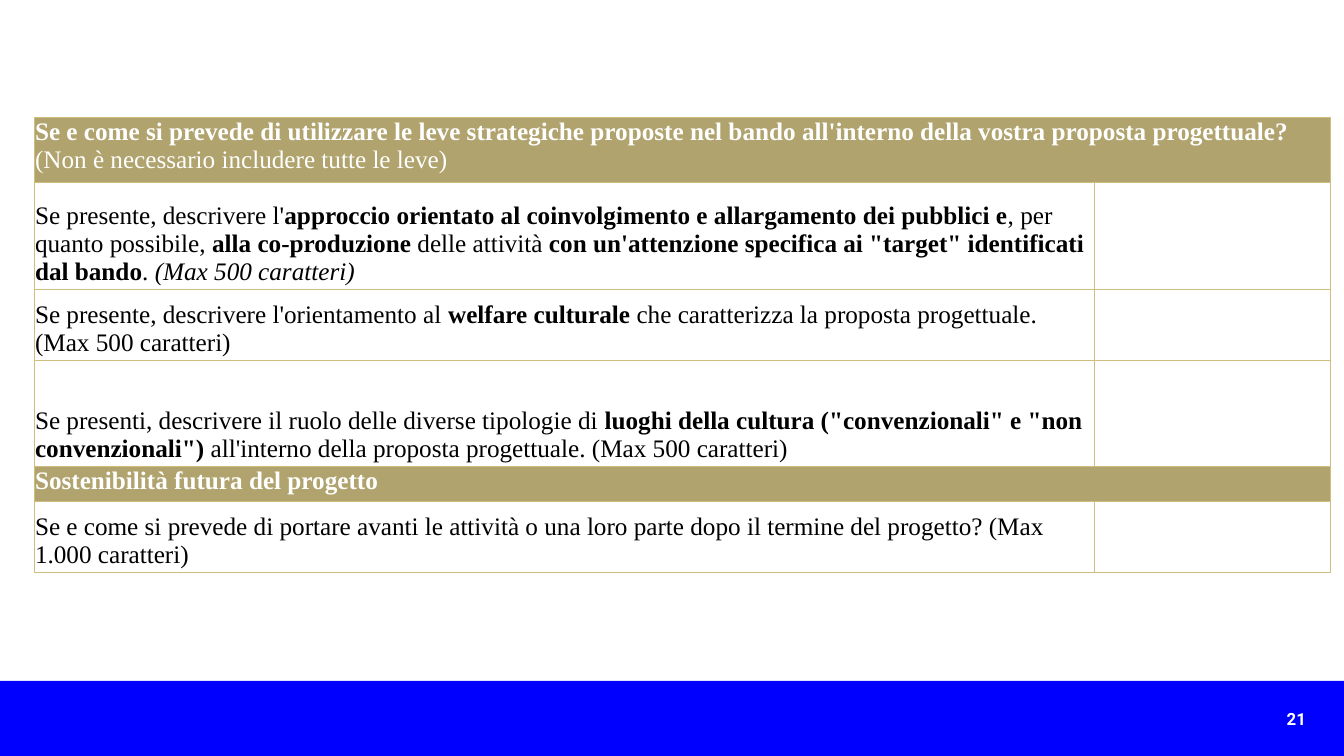
from lxml import etree
from pptx import Presentation
from pptx import util as u
from pptx.dml.color import RGBColor
from pptx.enum import shapes, text
from pptx.oxml import ns

EMU_PER_PX = 914400 / 100.8
WIDTH, HEIGHT = 1344, 756
GOLD, RULE, BLUE, WHITE, BLACK = "B0A36D", "CFBE7E", "0000FF", "FFFFFF", "000000"
PLAIN, BOLD, ITALIC = "plain", "bold", "italic"

# Each row: height, whether it is a section heading, runs of (wording, style)
QUESTIONS = [
    (65, True, [
        ("Se e come si prevede di utilizzare le leve strategiche proposte nel bando "
         "all'interno della vostra proposta progettuale? ", BOLD),
        ("(Non è necessario includere tutte le leve)", PLAIN)]),
    (107, False, [
        ("Se presente, descrivere l'", PLAIN),
        ("approccio orientato al coinvolgimento e allargamento dei pubblici e", BOLD),
        (", per quanto possibile,", PLAIN),
        (" alla co-produzione ", BOLD),
        ("delle attività ", PLAIN),
        ("con un'attenzione specifica ai \"target\" identificati dal bando", BOLD),
        (". ", PLAIN),
        ("(Max 500 caratteri)", ITALIC)]),
    (71, False, [
        ("Se presente, descrivere l'orientamento al ", PLAIN),
        ("welfare culturale", BOLD),
        (" che caratterizza la proposta progettuale. (Max 500 caratteri)", PLAIN)]),
    (106, False, [
        ("Se presenti, descrivere il ruolo delle diverse tipologie di", PLAIN),
        (" luoghi della cultura (\"convenzionali\" e \"non convenzionali\")", BOLD),
        (" all'interno della proposta progettuale. (Max 500 caratteri)", PLAIN)]),
    (34, True, [("Sostenibilità futura del progetto", BOLD)]),
    (71, False, [
        ("Se e come si prevede di portare avanti le attività o una loro parte "
         "dopo il termine del progetto? (Max 1.000 caratteri)", PLAIN)]),
]


def px(length):
    return u.Emu(round(length * EMU_PER_PX))


def color(value):
    return RGBColor.from_string(value)


def add_run(paragraph, wording, style, face, size, ink):
    run = paragraph.add_run()
    run.text = wording
    font = run.font
    font.name, font.size = face, u.Pt(size)
    font.bold, font.italic = style == BOLD, style == ITALIC
    font.color.rgb = color(ink)


def set_insets(box, left, top, right, bottom):
    box.margin_left, box.margin_top = px(left), px(top)
    box.margin_right, box.margin_bottom = px(right), px(bottom)


def rule_cell(cell):
    """Draw a thin line on all four sides of the cell."""
    properties = cell._tc.get_or_add_tcPr()
    for position, side in enumerate(("lnL", "lnR", "lnT", "lnB")):
        line = etree.Element(ns.qn(f"a:{side}"), w=str(u.Pt(0.5)))
        fill = etree.SubElement(line, ns.qn("a:solidFill"))
        etree.SubElement(fill, ns.qn("a:srgbClr"), val=RULE)
        properties.insert(position, line)


def add_question_table(slide, left, top, question_width, answer_width):
    height = sum(row[0] for row in QUESTIONS)
    table = slide.shapes.add_table(
        len(QUESTIONS), 2, px(left), px(top),
        px(question_width + answer_width), px(height)).table
    table.first_row = table.horz_banding = False
    table.columns[0].width, table.columns[1].width = px(question_width), px(answer_width)
    for index, (row_height, heading, runs) in enumerate(QUESTIONS):
        table.rows[index].height = px(row_height)
        question, answer = table.cell(index, 0), table.cell(index, 1)
        for cell in (question, answer):
            if heading:
                cell.fill.solid()
                cell.fill.fore_color.rgb = color(GOLD)
            else:
                cell.fill.background()
            rule_cell(cell)
        if heading:
            question.merge(answer)
        else:
            question.vertical_anchor = text.MSO_ANCHOR.BOTTOM
        set_insets(question, 1, 1, 1, 4)
        for wording, style in runs:
            add_run(question.text_frame.paragraphs[0], wording, style,
                    "Times New Roman", 18, WHITE if heading else BLACK)


def add_footer(slide, left, top, width, height):
    band = slide.shapes.add_shape(
        shapes.MSO_SHAPE.RECTANGLE, px(left), px(top), px(width), px(height))
    band.shadow.inherit = False
    band.fill.solid()
    band.fill.fore_color.rgb = color(BLUE)
    band.line.fill.background()

    number_width, number_height = 427, 30
    number = slide.shapes.add_textbox(
        px(left + width - 28 - number_width), px(top + 23),
        px(number_width), px(number_height)).text_frame
    number.word_wrap = True
    set_insets(number, 10, 5, 10, 5)
    paragraph = number.paragraphs[0]
    paragraph.alignment = text.PP_ALIGN.RIGHT
    add_run(paragraph, "21", BOLD, "Roboto", 12, WHITE)


def main():
    deck = Presentation()
    deck.slide_width, deck.slide_height = px(WIDTH), px(HEIGHT)
    slide = deck.slides.add_slide(deck.slide_layouts.get_by_name("Blank"))
    add_footer(slide, 0, 681, WIDTH, HEIGHT - 681)
    add_question_table(slide, 34, 117, 1060, 236)
    deck.save("out.pptx")


if __name__ == "__main__":
    main()
